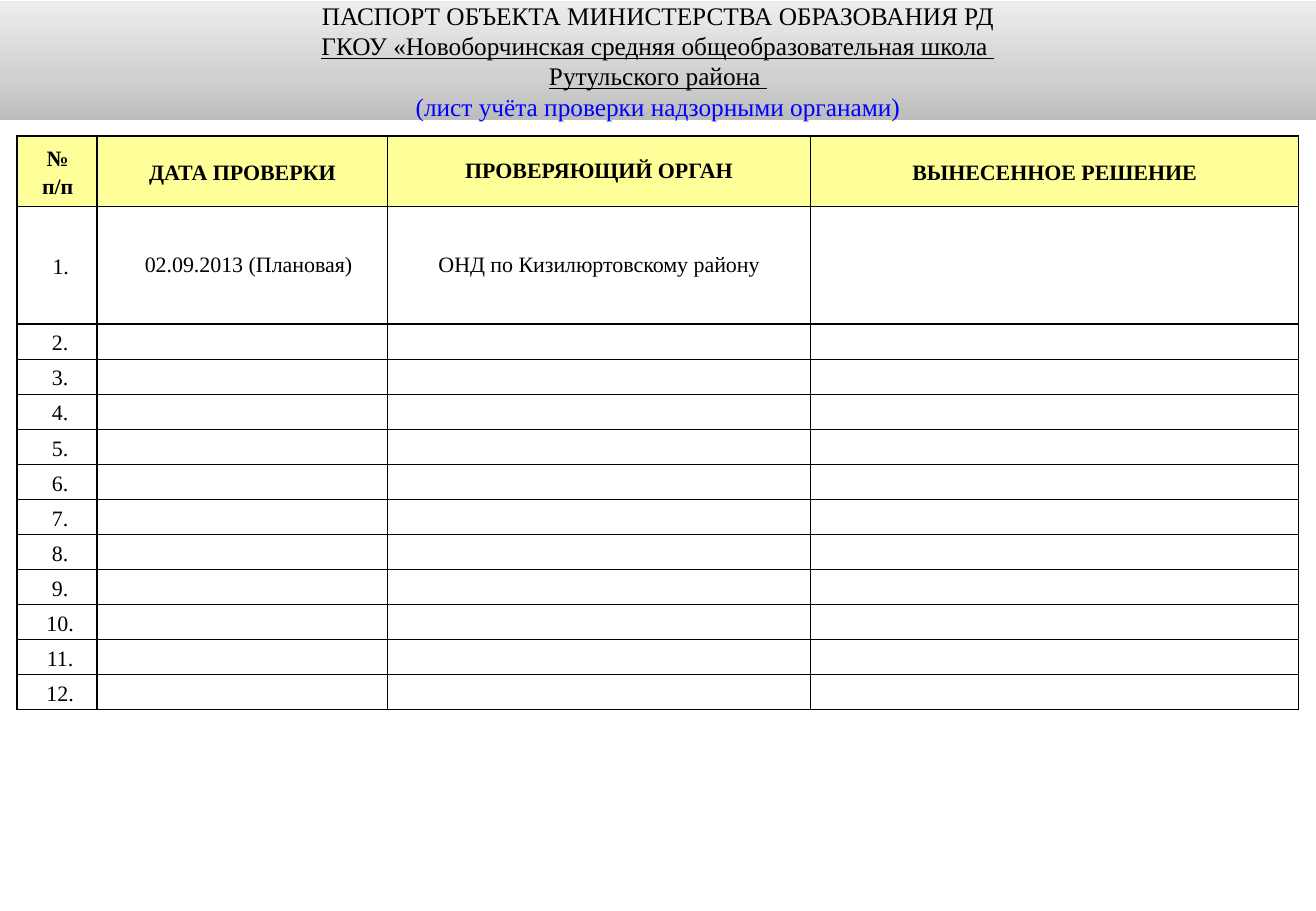
from copy import deepcopy
from dataclasses import dataclass
from typing import Any

from lxml.etree import SubElement
from pptx import Presentation
from pptx.dml.color import RGBColor
from pptx.enum.text import MSO_ANCHOR as Anchor, MSO_AUTO_SIZE as AutoSize, PP_ALIGN as Align
from pptx.oxml.ns import qn
from pptx.util import Length, Pt


@dataclass(frozen=True)
class Theme:
    font: str = "Times New Roman"
    title_size: Length = Pt(15)
    table_size: Length = Pt(13)
    text: RGBColor = RGBColor(0, 0, 0)
    accent: RGBColor = RGBColor(0, 0, 0xFF)
    head_fill: RGBColor = RGBColor(0xFF, 0xFF, 0x99)
    row_fill: RGBColor = RGBColor(0xFF, 0xFF, 0xFF)
    border: str = "000000"
    band: tuple[tuple[float, str], ...] = ((0, "BCBCBC"), (0.35, "D0D0D0"), (1, "EDEDED"))


@dataclass(frozen=True)
class TitleLine:
    text: str
    color: RGBColor
    underline: bool = False


@dataclass(frozen=True)
class Entry:
    text: str = ""
    indent: Length = Pt(0)
    spacing: float | Length = 1.15


THEME = Theme()
EXACT = Pt(14)

TITLE_LINES = [
    TitleLine("ПАСПОРТ ОБЪЕКТА МИНИСТЕРСТВА ОБРАЗОВАНИЯ РД", THEME.text),
    TitleLine("ГКОУ «Новоборчинская средняя общеобразовательная школа ", THEME.text, True),
    TitleLine("Рутульского района ", THEME.text, True),
    TitleLine("(лист учёта проверки надзорными органами)", THEME.accent),
]
HEADINGS = [
    Entry("№\nп/п", Pt(0.7)),
    Entry("ДАТА ПРОВЕРКИ"),
    Entry("ПРОВЕРЯЮЩИЙ ОРГАН", spacing=EXACT),
    Entry("ВЫНЕСЕННОЕ РЕШЕНИЕ"),
]
FIRST_CHECK = [
    Entry("1.", Pt(4.3)),
    Entry("02.09.2013 (Плановая)", Pt(7.2), EXACT),
    Entry("ОНД по Кизилюртовскому району", spacing=EXACT),
    Entry(),
]
EMPTY_CHECKS = [[Entry(f"{number}.", Pt(3.6)), Entry(), Entry(), Entry()]
                for number in range(2, 13)]
CHECKS = [HEADINGS, FIRST_CHECK, *EMPTY_CHECKS]

COLUMN_WIDTHS = [Pt(47.5), Pt(172.1), Pt(250.6), Pt(289.4)]
ROW_HEIGHTS = [Pt(41.8), Pt(69.8)] + [Pt(20.8)] * len(EMPTY_CHECKS)


def apply(target: Any, values: dict[str, Any]) -> None:
    for name, value in values.items():
        setattr(target, name, value)


def format_font(font: Any, size: Length, color: RGBColor, **extra: Any) -> None:
    apply(font, {"name": THEME.font, "size": size, **extra})
    font.color.rgb = color


def fill_band(shape: Any) -> None:
    shape.fill.gradient()
    stops = shape.element.spPr.find(".//" + qn("a:gsLst"))
    stops.append(deepcopy(stops[0]))
    for stop, (position, color) in zip(shape.fill.gradient_stops, THEME.band):
        stop.position = position
        stop.color.rgb = RGBColor.from_string(color)
    shape.fill.gradient_angle = 90


def draw_title(title: Any) -> None:
    apply(title, {"left": Pt(0), "top": Pt(0.5), "width": Pt(780), "height": Pt(70.8)})
    fill_band(title)
    frame = title.text_frame
    frame.text = "\n".join(line.text for line in TITLE_LINES)
    apply(frame, {"auto_size": AutoSize.NONE, "word_wrap": True,
                  "vertical_anchor": Anchor.MIDDLE})
    for paragraph, line in zip(frame.paragraphs, TITLE_LINES):
        paragraph.alignment = Align.CENTER
        format_font(paragraph.runs[0].font, THEME.title_size, line.color,
                    underline=line.underline)


def draw_borders(cell: Any) -> None:
    properties = cell._tc.get_or_add_tcPr()
    for position, side in enumerate(("lnL", "lnR", "lnT", "lnB")):
        line = properties.makeelement(qn(f"a:{side}"), {"w": str(Pt(1))})
        solid = SubElement(line, qn("a:solidFill"))
        SubElement(solid, qn("a:srgbClr"), {"val": THEME.border})
        properties.insert(position, line)


def draw_cell(cell: Any, entry: Entry, heading: bool) -> None:
    apply(cell, {"margin_left": Pt(2.2), "margin_right": Pt(2.2), "margin_top": Pt(0),
                 "margin_bottom": Pt(0), "vertical_anchor": Anchor.MIDDLE})
    cell.fill.solid()
    cell.fill.fore_color.rgb = THEME.head_fill if heading else THEME.row_fill
    draw_borders(cell)
    cell.text = entry.text
    for paragraph in cell.text_frame.paragraphs:
        apply(paragraph, {"alignment": Align.CENTER, "line_spacing": entry.spacing})
        paragraph._p.get_or_add_pPr().set("marL", str(entry.indent))
        for run in paragraph.runs:
            format_font(run.font, THEME.table_size, THEME.text, bold=heading)
        # The end mark keeps empty rows at their set height
        SubElement(paragraph._p, qn("a:endParaRPr"), {"sz": str(int(THEME.table_size.pt * 100))})


def draw_checks(slide: Any) -> None:
    table = slide.shapes.add_table(len(CHECKS), len(HEADINGS), Pt(10.1), Pt(80.6),
                                   sum(COLUMN_WIDTHS), sum(ROW_HEIGHTS)).table
    apply(table, {"first_row": False, "horz_banding": False})
    for column, width in zip(table.columns, COLUMN_WIDTHS):
        column.width = width
    for row, height, entries in zip(table.rows, ROW_HEIGHTS, CHECKS):
        row.height = height
        for cell, entry in zip(row.cells, entries):
            draw_cell(cell, entry, entries is HEADINGS)


def main() -> None:
    deck = Presentation()
    apply(deck, {"slide_width": Pt(780), "slide_height": Pt(540)})
    slide = deck.slides.add_slide(deck.slide_layouts[5])
    # Header band
    draw_title(slide.shapes.title)
    # Inspection log
    draw_checks(slide)
    deck.save("out.pptx")


if __name__ == "__main__":
    main()
